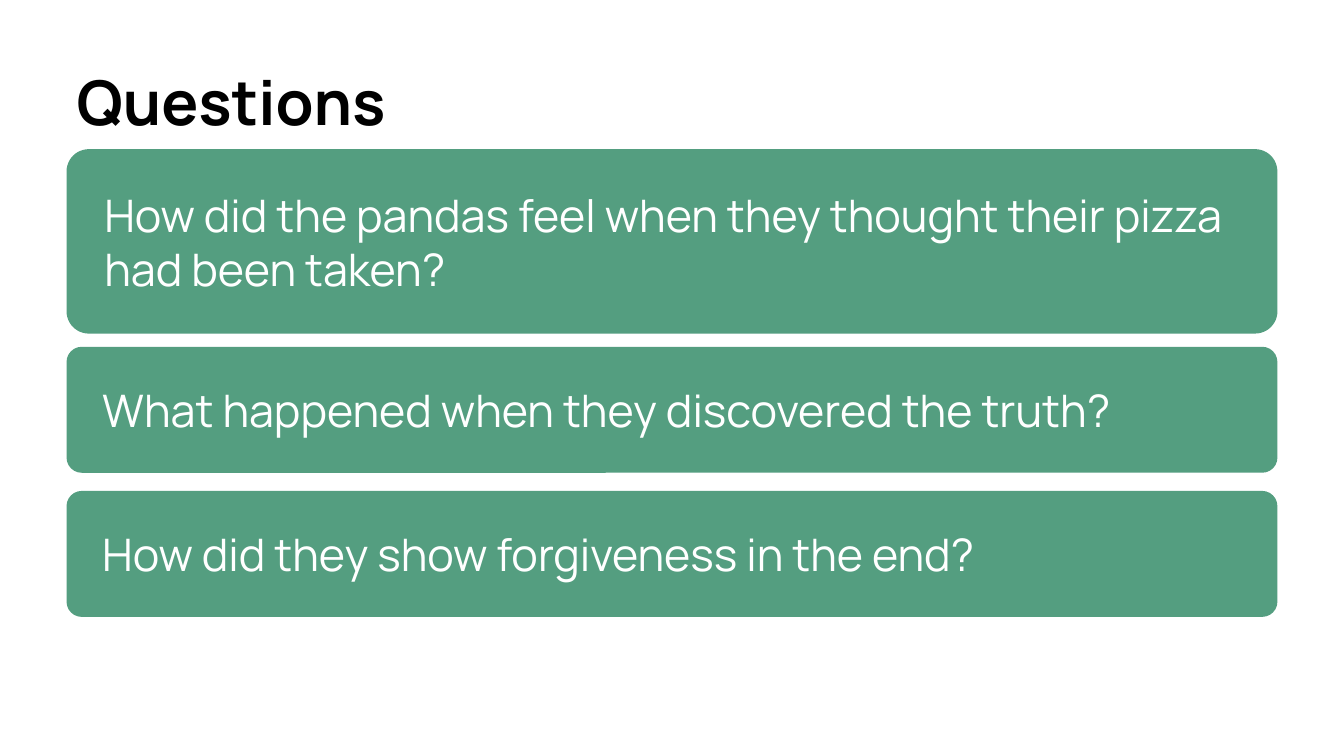
from pptx import Presentation
from pptx.dml.color import RGBColor
from pptx.enum import shapes, text
from pptx.util import Inches, Pt

GREEN = RGBColor(0x54, 0x9E, 0x80)
WHITE = RGBColor(0xFF, 0xFF, 0xFF)
BLACK = RGBColor(0, 0, 0)
FONT = "Manrope"

HEADING = "Questions"
QUESTIONS = [
    ("How did the pandas feel when they thought their pizza had been taken?", 1.48, 1.83),
    ("What happened when they discovered the truth?", 3.44, 1.25),
    ("How did they show forgiveness in the end?", 4.87, 1.25),
]
LEFT, CARD_WIDTH, PADDING, ROUNDING = 0.66, 12.01, 0.31, 0.121


def write(frame, wording, size, color, bold=False, spacing=1.0, inset=None):
    """Fill a text frame with one left-aligned, vertically centred paragraph."""
    frame.word_wrap = True
    frame.auto_size = text.MSO_AUTO_SIZE.NONE
    frame.vertical_anchor = text.MSO_ANCHOR.MIDDLE
    if inset is not None:
        frame.margin_left = frame.margin_right = Inches(inset)
        frame.margin_top = frame.margin_bottom = Inches(inset)
    paragraph = frame.paragraphs[0]
    paragraph.alignment = text.PP_ALIGN.LEFT
    paragraph.line_spacing = spacing
    paragraph.space_before = Pt(0)
    run = paragraph.add_run()
    run.text = wording
    run.font.name = FONT
    run.font.size = Pt(size)
    run.font.bold = bold
    run.font.color.rgb = color


def main():
    """Build the questions slide."""
    deck = Presentation()
    deck.slide_width, deck.slide_height = Inches(13.33), Inches(7.5)
    slide = deck.slides.add_slide(deck.slide_layouts[5])

    heading = slide.shapes.title
    heading.left, heading.top = Inches(LEFT), Inches(0.37)
    heading.width, heading.height = Inches(11.85), Inches(1.11)
    write(heading.text_frame, HEADING, 44, BLACK, bold=True, spacing=1.2)

    for question, top, height in QUESTIONS:
        card = slide.shapes.add_shape(
            shapes.MSO_SHAPE.ROUNDED_RECTANGLE,
            Inches(LEFT), Inches(top), Inches(CARD_WIDTH), Inches(height))
        card.adjustments[0] = ROUNDING
        card.shadow.inherit = False
        card.fill.solid()
        card.fill.fore_color.rgb = GREEN
        card.line.fill.background()
        write(card.text_frame, question, 32, WHITE, inset=PADDING)

    deck.save("out.pptx")


if __name__ == "__main__":
    main()
